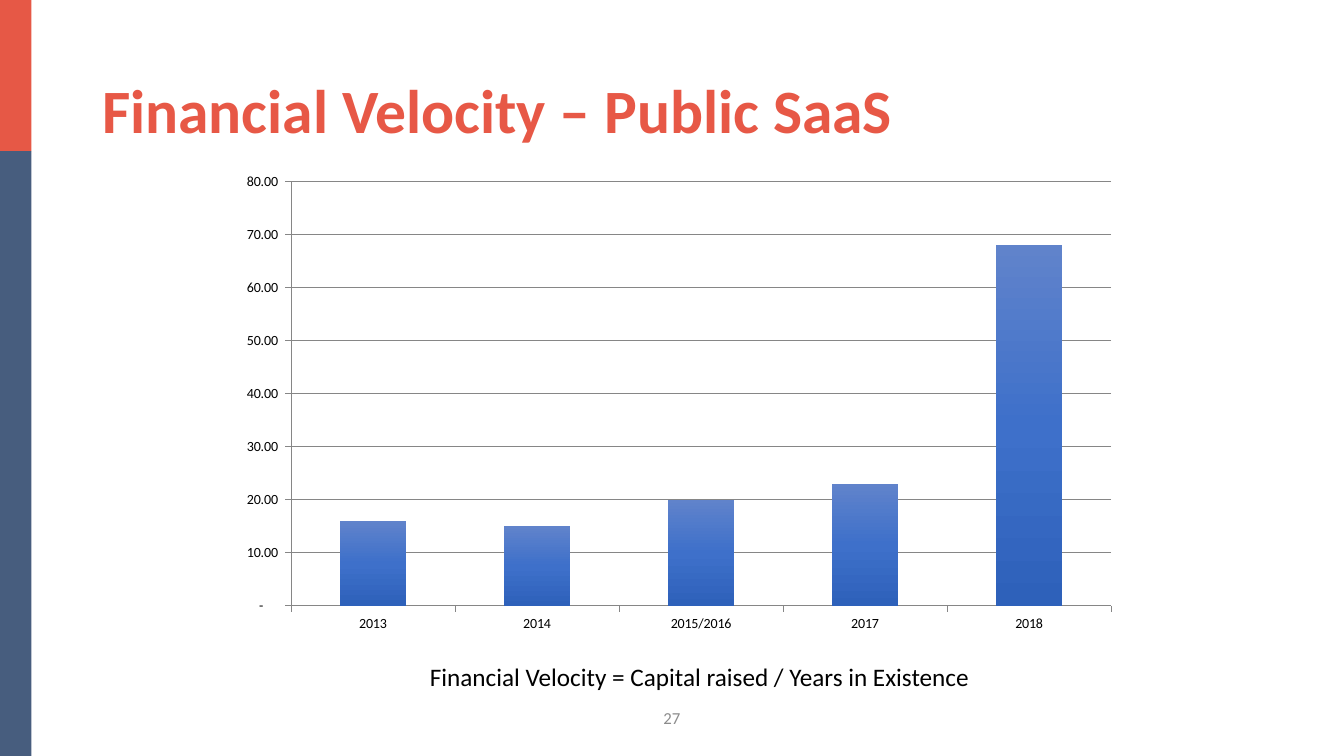
from copy import deepcopy

from pptx import Presentation, util as u
from pptx.chart.data import CategoryChartData
from pptx.dml.color import RGBColor
from pptx.enum import chart as ch, shapes, text

FONT = "Calibri"
CORAL, NAVY, GREY, BLACK = "E65846", "475D7E", "868686", "000000"
W, H = 960, 540


def rgb(value):
    return RGBColor.from_string(value)


def style(font, size, color, bold=False):
    font.name, font.size, font.bold = FONT, u.Pt(size), bold
    font.color.rgb = rgb(color)


def add_text(s, box, words, size, color, bold=False, align=text.PP_ALIGN.LEFT,
             anchor=text.MSO_ANCHOR.MIDDLE, wrap=True):
    tf = s.shapes.add_textbox(*map(u.Pt, box)).text_frame
    tf.word_wrap, tf.vertical_anchor = wrap, anchor
    tf.text = words
    p = tf.paragraphs[0]
    p.alignment = align
    style(p.runs[0].font, size, color, bold)
    return p


def add_side_band(s, x, y, w, h):
    top = h / 5
    for offset, height, color in ((0, top, CORAL), (top, h - top, NAVY)):
        sp = s.shapes.add_shape(shapes.MSO_SHAPE.RECTANGLE,
                                *map(u.Pt, (x, y + offset, w, height)))
        sp.shadow.inherit = False
        sp.fill.solid()
        sp.fill.fore_color.rgb = rgb(color)
        sp.line.fill.background()


def shade_bars(series):
    fill = series.format.fill
    fill.gradient()
    fill.gradient_angle = 270
    stop_list = series._element.xpath(".//a:gsLst")[0]
    stop_list.insert(1, deepcopy(stop_list[0]))
    shades = ((0, "6083CB"), (0.5, "3E70CA"), (1, "2E61BA"))
    for stop, (position, color) in zip(fill.gradient_stops, shades):
        stop.position = position
        stop.color.rgb = rgb(color)


def add_velocity_chart(s, x, y, w, h):
    data = CategoryChartData()
    data.categories = ["2013", "2014", "2015/2016", "2017", "2018"]
    data.add_series("Series 1", (16, 15, 20, 23, 68))
    chart = s.shapes.add_chart(ch.XL_CHART_TYPE.COLUMN_CLUSTERED,
                               *map(u.Pt, (x, y, w, h)), data).chart
    chart.has_legend = chart.has_title = False
    style(chart.font, 10, BLACK)

    plot = chart.plots[0]
    plot.gap_width, plot.vary_by_categories = 150, False
    shade_bars(plot.series[0])

    values = chart.value_axis
    values.minimum_scale, values.maximum_scale, values.major_unit = 0, 80, 10
    values.has_major_gridlines = True
    values.tick_labels.number_format = '#,##0.00_-;-#,##0.00_-;"-"??_-'
    values.tick_labels.number_format_is_linked = False
    for axis in (values, chart.category_axis):
        axis.major_tick_mark = ch.XL_TICK_MARK.OUTSIDE
    for part in (values, chart.category_axis, values.major_gridlines):
        part.format.line.color.rgb = rgb(GREY)
        part.format.line.width = u.Pt(0.75)


def build_slide(prs):
    s = prs.slides.add_slide(prs.slide_layouts[6])
    add_side_band(s, 0, 0, 22.5, H)
    title = add_text(s, (66, 28.75, 828, 104.4), "Financial Velocity – Public SaaS",
                     44, "E75846", bold=True)
    title.line_spacing = 0.9
    add_velocity_chart(s, 163.5, 117.4, 643, 340.5)
    add_text(s, (300, 468.7, 404, 29), "Financial Velocity = Capital raised / Years in Existence",
             18, BLACK, anchor=text.MSO_ANCHOR.TOP, wrap=False)
    add_text(s, (372, 498.5, 216, 28.75), "27", 12, "8C8C8C", align=text.PP_ALIGN.CENTER)


def main():
    prs = Presentation()
    prs.slide_width, prs.slide_height = u.Pt(W), u.Pt(H)
    build_slide(prs)
    prs.save("out.pptx")


if __name__ == "__main__":
    main()
